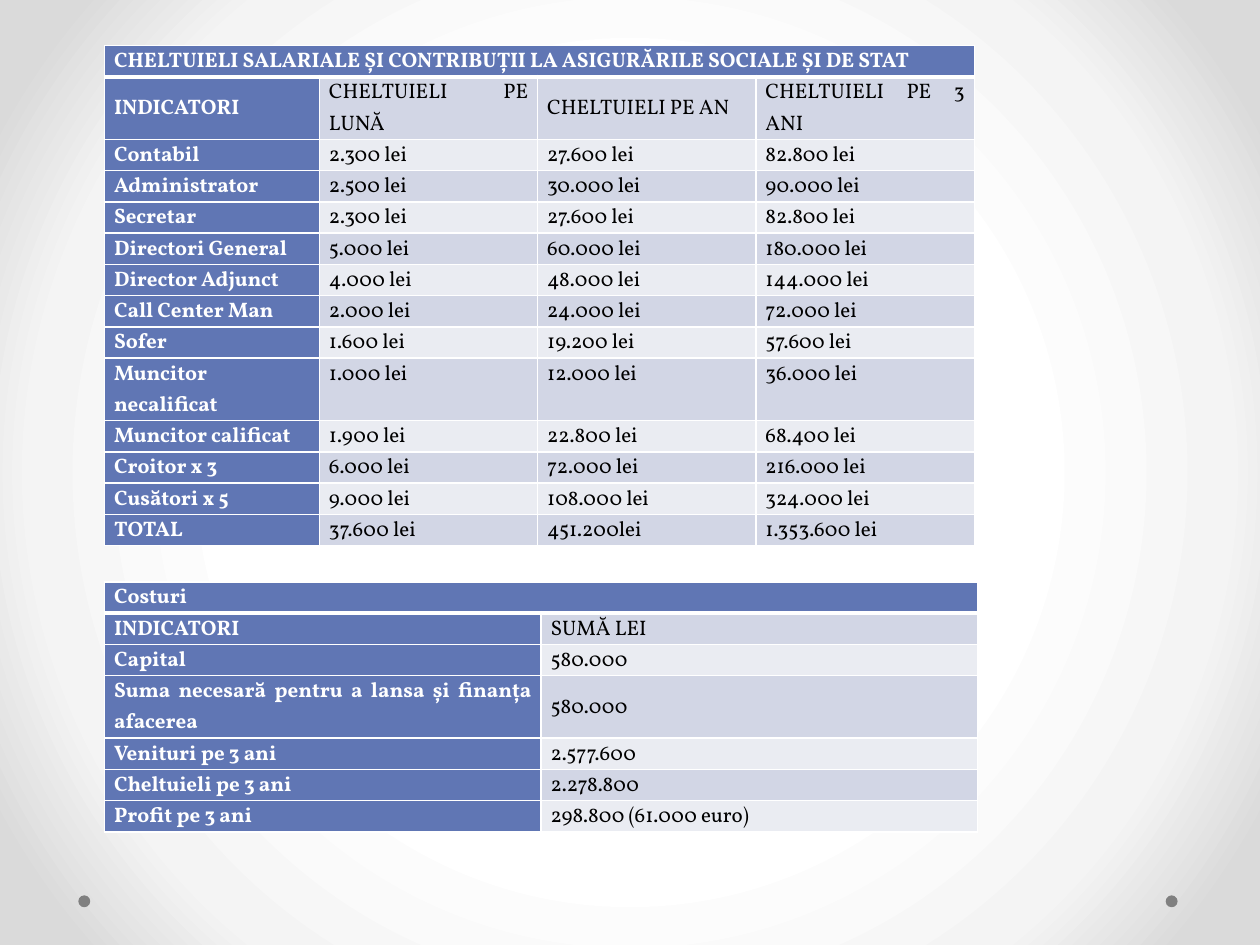
from lxml import etree
from pptx import Presentation
from pptx import util as u
from pptx.dml.color import RGBColor
from pptx.enum import shapes, text
from pptx.oxml.ns import qn

FONT = "Vollkorn"
BLUE, BAND, PALE, WHITE, BLACK, GREY = "6076B4", "D2D6E5", "EAECF2", "FFFFFF", "000000", "808080"
LEFT = 2.11
ROW_HEIGHT = 0.6

SALARIES = [
    ["CHELTUIELI SALARIALE ȘI CONTRIBUȚII LA ASIGURĂRILE SOCIALE ȘI DE STAT"],
    ["INDICATORI", "CHELTUIELI PE LUNĂ", "CHELTUIELI PE AN", "CHELTUIELI PE 3 ANI"],
    ["Contabil", "2.300 lei", "27.600 lei", "82.800 lei"],
    ["Administrator", "2.500 lei", "30.000 lei", "90.000 lei"],
    ["Secretar", "2.300 lei", "27.600 lei", "82.800 lei"],
    ["Directori General", "5.000 lei", "60.000 lei", "180.000 lei"],
    ["Director Adjunct", "4.000 lei", "48.000 lei", "144.000 lei"],
    ["Call Center Man", "2.000 lei", "24.000 lei", "72.000 lei"],
    ["Sofer", "1.600 lei", "19.200 lei", "57.600 lei"],
    ["Muncitor  necalificat", "1.000 lei", "12.000 lei", "36.000 lei"],
    ["Muncitor calificat", "1.900 lei", "22.800 lei", "68.400 lei"],
    ["Croitor x 3", "6.000 lei", "72.000 lei", "216.000 lei"],
    ["Cusători x 5", "9.000 lei", "108.000 lei", "324.000 lei"],
    ["TOTAL", "37.600 lei", "451.200lei", "1.353.600 lei"],
]
COSTS = [
    ["Costuri"],
    ["INDICATORI", "SUMĂ LEI"],
    ["Capital", "580.000"],
    ["Suma necesară pentru a lansa și finanța afacerea", "580.000"],
    ["Venituri pe 3 ani", "2.577.600"],
    ["Cheltuieli pe 3 ani", "2.278.800"],
    ["Profit pe 3 ani", "298.800 (61.000 euro)"],
]


def color(value):
    """Turn a hex string into a colour."""
    return RGBColor.from_string(value)


def add_solid(parent, value):
    """Append a solid fill element to an XML parent."""
    fill = etree.SubElement(parent, qn("a:solidFill"))
    etree.SubElement(fill, qn("a:srgbClr"), val=value)


def set_background(page, stops):
    """Give the page a circular gradient that spreads from its centre."""
    page.background.fill.gradient()
    gradient = page.element.find(".//" + qn("a:gradFill"))
    for child in list(gradient):
        gradient.remove(child)
    stop_list = etree.SubElement(gradient, qn("a:gsLst"))
    for percent, value in stops:
        stop = etree.SubElement(stop_list, qn("a:gs"), pos=str(percent * 1000))
        etree.SubElement(stop, qn("a:srgbClr"), val=value)
    circle = etree.SubElement(gradient, qn("a:path"), path="circle")
    etree.SubElement(circle, qn("a:fillToRect"), l="50000", t="50000", r="50000", b="50000")


def add_dot(page, left):
    """Add a small grey dot near the bottom of the page."""
    dot = page.shapes.add_shape(
        shapes.MSO_SHAPE.OVAL, u.Cm(left), u.Cm(18.05), u.Cm(0.24), u.Cm(0.24))
    dot.shadow.inherit = False
    dot.fill.solid()
    dot.fill.fore_color.rgb = color(GREY)
    dot.line.fill.background()


def set_borders(cell, top, bottom):
    """Draw white cell borders with the given top and bottom widths in points."""
    properties = cell._tc.get_or_add_tcPr()
    for side, width in (("L", 1), ("R", 1), ("T", top), ("B", bottom)):
        line = etree.SubElement(properties, qn("a:ln" + side), w=str(u.Pt(width)))
        add_solid(line, WHITE)


def write_cell(cell, words, value, bold):
    """Write one justified run into a cell."""
    para = cell.text_frame.paragraphs[0]
    para.alignment = text.PP_ALIGN.JUSTIFY
    para.line_spacing = 1.07
    para.space_after = u.Pt(8)
    span = para.add_run()
    span.text = words
    span.font.name = FONT
    span.font.size = u.Pt(12)
    span.font.bold = bold
    span.font.color.rgb = color(value)


def add_budget_table(page, top, widths, rows, middle_rows, tall_rows=()):
    """Add a table with a merged heading, blue labels and banded values."""
    heights = [2.1 * ROW_HEIGHT if index in tall_rows else ROW_HEIGHT for index in range(len(rows))]
    table = page.shapes.add_table(
        len(rows), len(widths), u.Cm(LEFT), u.Cm(top), u.Cm(sum(widths)), u.Cm(sum(heights))).table
    table.first_row = table.horz_banding = False
    for column, width in zip(table.columns, widths):
        column.width = u.Cm(width)
    for row, height in zip(table.rows, heights):
        row.height = u.Cm(height)
    table.cell(0, 0).merge(table.cell(0, len(widths) - 1))
    for i, row in enumerate(table.rows):
        for j, cell in enumerate(row.cells):
            label = i == 0 or j == 0
            cell.margin_left = cell.margin_right = u.Cm(0.19)
            cell.margin_top = cell.margin_bottom = 0
            if i in middle_rows:
                cell.vertical_anchor = text.MSO_ANCHOR.MIDDLE
            set_borders(cell, 3 if i == 1 else 1, 3 if i == 0 else 1)
            cell.fill.solid()
            cell.fill.fore_color.rgb = color(BLUE if label else BAND if i % 2 else PALE)
            if j < len(rows[i]):
                write_cell(cell, rows[i][j], WHITE if label else BLACK, label)


def main():
    """Build the budget slide."""
    deck = Presentation()
    deck.slide_width, deck.slide_height = u.Cm(25.4), u.Cm(19.05)
    page = deck.slides.add_slide(deck.slide_layouts[6])
    set_background(page, [(50, WHITE), (76, "F4F4F4"), (92, "DADADA")])
    for left in (23.5, 1.58):
        add_dot(page, left)
    add_budget_table(page, 0.92, [4.33, 4.4, 4.4, 4.4], SALARIES, {1})
    add_budget_table(page, 11.73, [8.8, 8.8], COSTS, range(1, len(COSTS)), tall_rows={3})
    deck.save("out.pptx")


if __name__ == "__main__":
    main()
